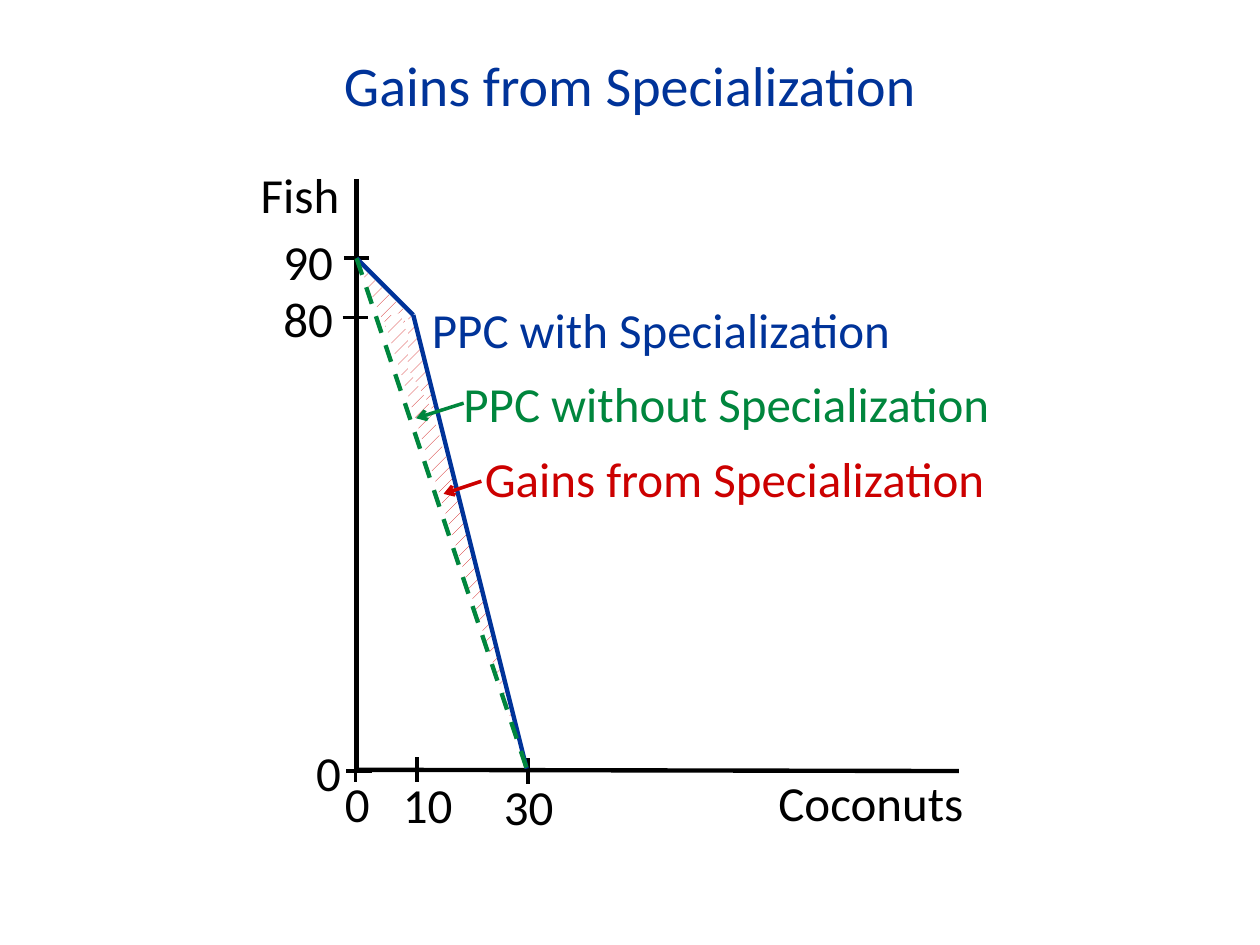
import pptx
import pptx.dml.color
import pptx.enum.dml
import pptx.enum.shapes
import pptx.enum.text
import pptx.oxml
import pptx.oxml.ns
import pptx.util

Pt = pptx.util.Pt
RGBColor = pptx.dml.color.RGBColor
SHAPE = pptx.enum.shapes.MSO_SHAPE
BLACK = RGBColor(0x00, 0x00, 0x00)
WHITE = RGBColor(0xFF, 0xFF, 0xFF)
BLUE = RGBColor(0x00, 0x33, 0x99)
GREEN = RGBColor(0x00, 0x86, 0x3D)
RED = RGBColor(0xCC, 0x00, 0x00)
FONT = "Calibri"
UNIT = 3.24
TICK = 14.4

GAINS = [
    (SHAPE.ISOSCELES_TRIANGLE, -13.7, -265.7, 69.8, 13.7, 66.9, None),
    (SHAPE.DIAGONAL_STRIPE, 43.2, -263.5, 20.2, 250.6, 347, "flipH"),
    (SHAPE.ISOSCELES_TRIANGLE, 0, -234.7, 67.7, 9.4, 75, "flipV"),
]
Y_TICKS = [(1.4, 1.4), (-0.7, -257.8), (0, -291.6)]
X_TICKS = [(-0.7, 0.7), (34.6, 0.7), (97.9, 1.4)]
LABELS = [
    ("0", -30.2, -18.7, 23.8, BLACK),
    ("80", -49, -277.9, 49, BLACK),
    ("90", -49, -310.3, 49, BLACK),
    ("0", -13.7, -0.7, 23.8, BLACK),
    ("10", 19.4, 0, 53.3, BLACK),
    ("30", 77, 0.7, 56.9, BLACK),
    ("Fish", -61.9, -348.5, 80.6, BLACK),
    ("Coconuts", 234, -1.4, 140.4, BLACK),
    ("PPC with Specialization", 36, -271.4, 291.6, BLUE),
    ("PPC without Specialization", 54, -229, 325.4, GREEN),
    ("Gains from Specialization", 66.2, -186.5, 326.2, RED),
]


def format_text(tf, text, size, color):
    """Set one line of text with its font."""
    tf.text = text
    font = tf.paragraphs[0].runs[0].font
    font.name, font.size, font.color.rgb = FONT, Pt(size), color


def add_title(s, left, top, width, height):
    """Move and format the title placeholder."""
    sp = s.shapes.title
    sp.left, sp.top, sp.width, sp.height = Pt(left), Pt(top), Pt(width), Pt(height)
    tf = sp.text_frame
    format_text(tf, "Gains from Specialization", 32, BLUE)
    tf.vertical_anchor = pptx.enum.text.MSO_ANCHOR.MIDDLE
    tf.paragraphs[0].alignment = pptx.enum.text.PP_ALIGN.CENTER


def add_line(s, start, end, color, width, dashed=False, arrow=False):
    """Draw a straight line, dashed or with an arrowhead if asked."""
    ends = [Pt(v) for v in (*start, *end)]
    sp = s.shapes.add_connector(pptx.enum.shapes.MSO_CONNECTOR.STRAIGHT, *ends)
    sp.line.color.rgb, sp.line.width = color, Pt(width)
    if dashed:
        sp.line.dash_style = pptx.enum.dml.MSO_LINE.DASH
    if arrow:
        ln = sp.line._get_or_add_ln()
        ln.append(pptx.oxml.parse_xml(
            f'<a:tailEnd {pptx.oxml.ns.nsdecls("a")} type="arrow"/>'))
    sp._element.spPr.append(pptx.oxml.parse_xml(
        f'<a:effectLst {pptx.oxml.ns.nsdecls("a")}/>'))


def add_hatch(s, kind, left, top, width, height, rotation, flip):
    """Add one red patterned piece of the gains area."""
    sp = s.shapes.add_shape(kind, Pt(left), Pt(top), Pt(width), Pt(height))
    sp.shadow.inherit = False
    sp.rotation = rotation
    if flip:
        sp._element.spPr.xfrm.set(flip, "1")
    sp.line.fill.background()
    sp.fill.patterned()
    sp.fill.pattern = pptx.enum.dml.MSO_PATTERN.PERCENT_10
    sp.fill.fore_color.rgb, sp.fill.back_color.rgb = RED, WHITE


def add_label(s, text, left, top, width, color):
    """Add a one-line label."""
    sp = s.shapes.add_textbox(Pt(left), Pt(top), Pt(width), Pt(41))
    sp.text_frame.word_wrap = True
    format_text(sp.text_frame, text, 28, color)


def add_graph(s, left, top, width, height):
    """Draw the production possibilities graph with its origin at the box's lower left."""
    def at(x, y):
        return left + x, top + height + y

    def value(coconuts, fish):
        return at(coconuts * UNIT, -fish * UNIT)

    for kind, x, y, *rest in GAINS:
        add_hatch(s, kind, *at(x, y), *rest)
    add_line(s, at(0, -height), at(0, 1.4), BLACK, 2.5)
    add_line(s, at(-1.4, 0.7), at(width, 1.4), BLACK, 2.5)
    for x, y in Y_TICKS:
        add_line(s, at(x - TICK / 2, y), at(x + TICK / 2, y), BLACK, 2)
    for x, y in X_TICKS:
        add_line(s, at(x, y - TICK / 2), at(x, y + TICK / 2), BLACK, 2)
    for text, x, y, label_width, color in LABELS:
        add_label(s, text, *at(x, y), label_width, color)
    add_line(s, value(0, 90), value(10, 80), BLUE, 2.5)
    add_line(s, value(10, 80), value(30, 0), BLUE, 2.5)
    add_line(s, value(0, 90), value(30, 0), GREEN, 2.5, dashed=True)
    add_line(s, at(61.2, -208.8), at(34, -200.2), GREEN, 2, arrow=True)
    add_line(s, at(71.3, -164.2), at(49.7, -157), RED, 2, arrow=True)


def main():
    """Build and save the slide."""
    prs = pptx.Presentation()
    prs.slide_width, prs.slide_height = Pt(720), Pt(540)
    s = prs.slides.add_slide(prs.slide_layouts[5])
    add_title(s, 50.4, 25.2, 619.2, 46)
    add_graph(s, 203.76, 102.24, 344.2, 336.96)
    prs.save("out.pptx")


if __name__ == "__main__":
    main()
